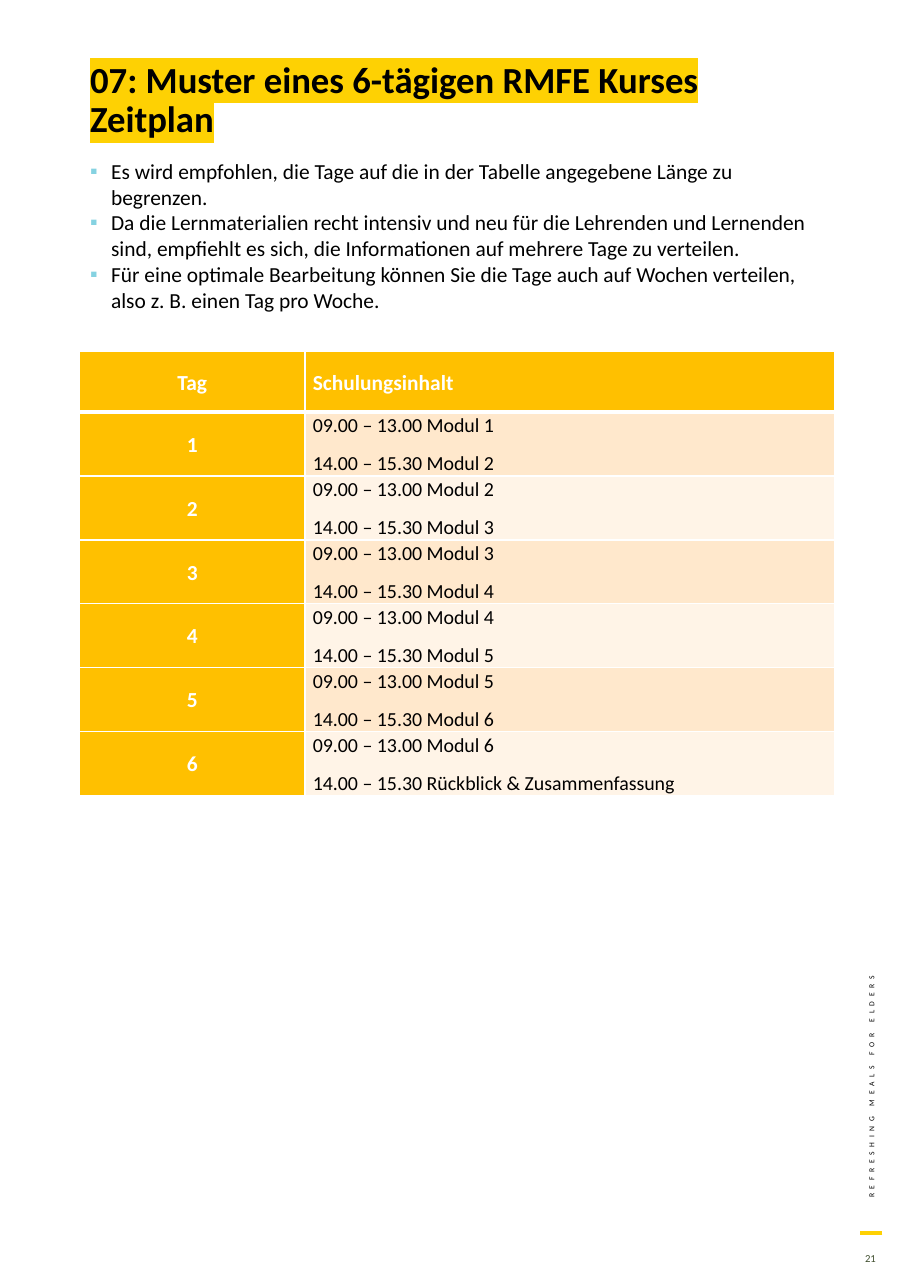
from lxml import etree
from pptx import Presentation
from pptx.dml.color import RGBColor as RGB
from pptx.enum.shapes import MSO_CONNECTOR as Conn
from pptx.enum.text import MSO_ANCHOR as Anchor, MSO_AUTO_SIZE as Auto, PP_ALIGN as Align
from pptx.oxml.ns import qn
from pptx.util import Inches, Pt

TITLE = "07: Muster eines 6-tägigen RMFE Kurses Zeitplan"
ADVICE = [
    "Es wird empfohlen, die Tage auf die in der Tabelle angegebene Länge zu begrenzen.",
    "Da die Lernmaterialien recht intensiv und neu für die Lehrenden und Lernenden sind, "
    "empfiehlt es sich, die Informationen auf mehrere Tage zu verteilen.",
    "Für eine optimale Bearbeitung können Sie die Tage auch auf Wochen verteilen, "
    "also z. B. einen Tag pro Woche.",
]
HEADER = ("Tag", "Schulungsinhalt")
MORNING, AFTERNOON = "09.00 – 13.00", "14.00 – 15.30"
TOPICS = [f"Modul {n}" for n in range(1, 7)] + ["Rückblick & Zusammenfassung"]
SIDE_TEXT = "REFRESHING MEALS FOR ELDERS"
PAGE_NUMBER = "21"

FONT = "Calibri"
BULLET_FONT = "Arial"
COLORS = {"black": "000000", "white": "FFFFFF", "mark": "FED103", "page": "404F2F",
          "bullet": "85D2E1", "amber": "FFC000", "odd": "FFE8CC", "even": "FFF4E7"}

WIDTH, HEIGHT = 8.27, 11.69
MARGIN = 0.72
CONTENT = 6.86
DAY_COL = 2.05
HEAD_ROW, DAY_ROW = 0.55, 0.58
TABLE_TOP = 3.19


def color(name):
    return RGB.from_string(COLORS[name])


def add_solid(parent, name):
    fill = etree.SubElement(parent, qn("a:solidFill"))
    etree.SubElement(fill, qn("a:srgbClr"), val=COLORS[name])


def write(tf, lines, size, fill="black", bold=False, align=Align.LEFT, anchor=Anchor.TOP,
          line=None, before=None, after=None, bullet=False, mark=None, spacing=None):
    tf.word_wrap = True
    tf.vertical_anchor = anchor
    for i, text in enumerate(lines):
        p = tf.paragraphs[0] if i == 0 else tf.add_paragraph()
        p.alignment = align
        p.line_spacing = line
        p.space_before = None if before is None else Pt(before)
        p.space_after = None if after is None else Pt(after)
        if bullet:
            pPr = p._p.get_or_add_pPr()
            pPr.set("marL", str(Inches(0.19)))
            pPr.set("indent", str(-Inches(0.19)))
            bu = etree.SubElement(pPr, qn("a:buClr"))
            etree.SubElement(bu, qn("a:srgbClr"), val=COLORS["bullet"])
            etree.SubElement(pPr, qn("a:buFont"), typeface=BULLET_FONT)
            etree.SubElement(pPr, qn("a:buChar"), char="▪")
        r = p.add_run()
        r.text = text
        r.font.name, r.font.size, r.font.bold = FONT, Pt(size), bold
        r.font.color.rgb = color(fill)
        rPr = r.font._element
        if mark:
            hl = etree.Element(qn("a:highlight"))
            etree.SubElement(hl, qn("a:srgbClr"), val=COLORS[mark])
            rPr.find(qn("a:solidFill")).addnext(hl)
        if spacing:
            rPr.set("spc", str(spacing * 100))


def add_text(s, box, lines, size, grow=False, rotation=0, **fmt):
    sp = s.shapes.add_textbox(*(Inches(v) for v in box))
    sp.rotation = rotation
    write(sp.text_frame, lines, size, **fmt)
    sp.text_frame.auto_size = Auto.SHAPE_TO_FIT_TEXT if grow else Auto.NONE


def set_borders(cell, row):
    tcPr = cell._tc.get_or_add_tcPr()
    widths = {"L": 1, "R": 1, "T": 3 if row == 1 else 1, "B": 3 if row == 0 else 1}
    for i, (side, width) in enumerate(widths.items()):
        ln = etree.Element(qn(f"a:ln{side}"), w=str(Pt(width)))
        add_solid(ln, "white")
        tcPr.insert(i, ln)


def add_schedule(s):
    days = [(str(n + 1), [f"{MORNING} {TOPICS[n]}", f"{AFTERNOON} {TOPICS[n + 1]}"])
            for n in range(len(TOPICS) - 1)]
    rows = [(HEADER[0], [HEADER[1]])] + days
    height = HEAD_ROW + DAY_ROW * len(days)
    table = s.shapes.add_table(len(rows), 2, Inches(MARGIN), Inches(TABLE_TOP),
                               Inches(CONTENT), Inches(height)).table
    for col, width in zip(table.columns, (DAY_COL, CONTENT - DAY_COL)):
        col.width = Inches(width)
    for i, (day, lessons) in enumerate(rows):
        table.rows[i].height = Inches(DAY_ROW if i else HEAD_ROW)
        for j, lines in enumerate(([day], lessons)):
            cell = table.cell(i, j)
            strong = i == 0 or j == 0
            cell.margin_left = cell.margin_right = Inches(0.07)
            cell.margin_top = cell.margin_bottom = 0
            cell.vertical_anchor = Anchor.MIDDLE if strong else Anchor.TOP
            cell.fill.solid()
            cell.fill.fore_color.rgb = color("amber" if strong else "odd" if i % 2 else "even")
            set_borders(cell, i)
            write(cell.text_frame, lines, 14 if strong else 13,
                  fill="white" if strong else "black", bold=strong,
                  align=Align.LEFT if j else Align.CENTER,
                  anchor=None, line=1.07, after=8)


def add_page_mark(s):
    add_text(s, (7.72, 11.27, 0.33, 0.29), [PAGE_NUMBER], 7, fill="page",
             align=Align.RIGHT, anchor=Anchor.MIDDLE)
    y = Inches(11.19)
    rule = s.shapes.add_connector(Conn.STRAIGHT, Inches(8.01), y, Inches(7.81), y)
    rule.line.color.rgb = color("mark")
    rule.line.width = Pt(2.25)
    etree.SubElement(rule._element.spPr, qn("a:effectLst"))
    add_text(s, (6.18, 9.14, 3.47, 0.19), [SIDE_TEXT], 5, grow=True, rotation=270, spacing=3)


def main():
    prs = Presentation()
    prs.slide_width, prs.slide_height = Inches(WIDTH), Inches(HEIGHT)
    s = prs.slides.add_slide(prs.slide_layouts[6])
    add_page_mark(s)
    add_text(s, (MARGIN, 0.51, 5.93, 0.58), [TITLE], 24, bold=True,
             line=0.9, before=8.3, mark="mark")
    add_schedule(s)
    add_text(s, (MARGIN, 1.38, CONTENT, 1.51), ADVICE, 14, grow=True,
             anchor=Anchor.MIDDLE, bullet=True)
    prs.save("out.pptx")


if __name__ == "__main__":
    main()
